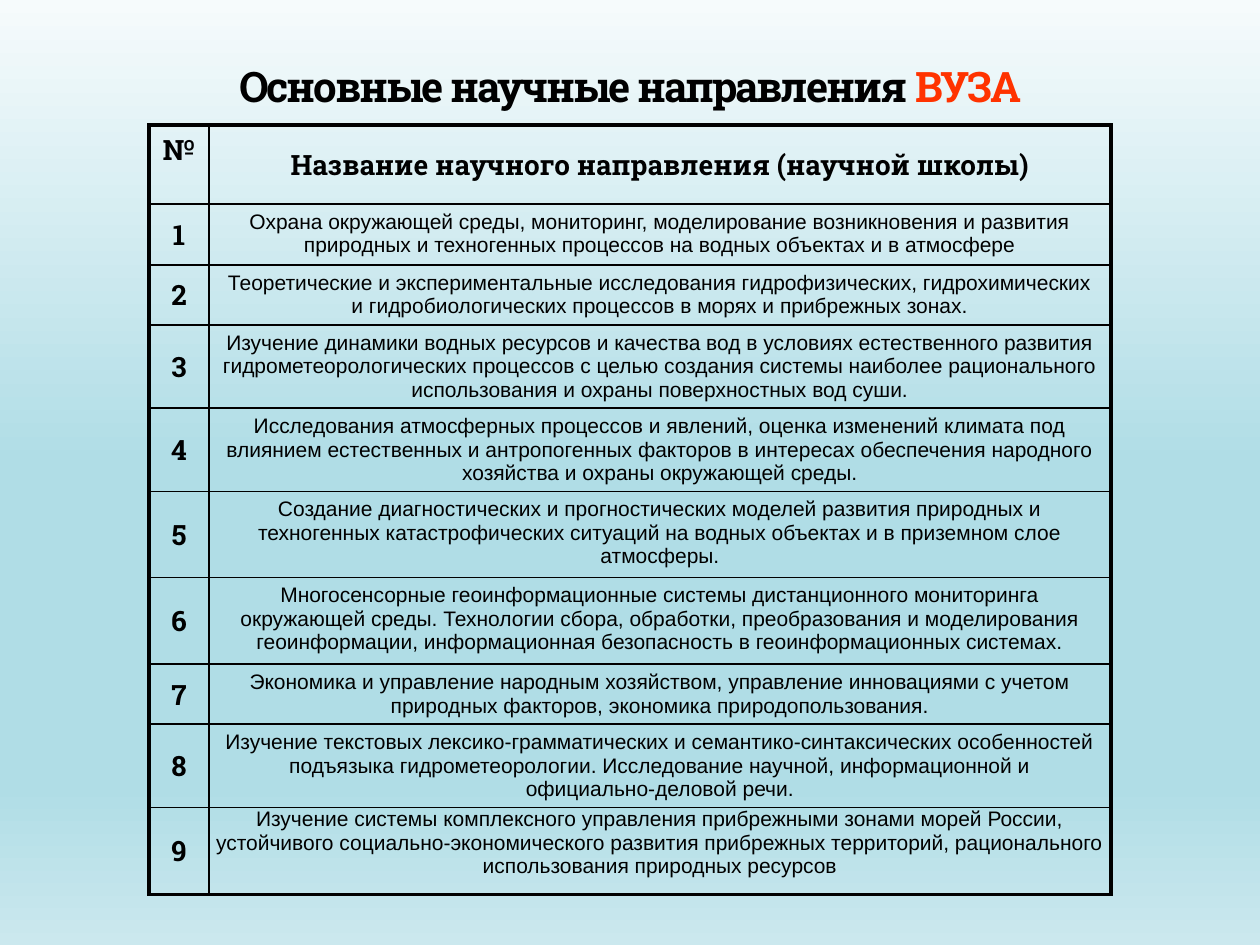
from lxml import etree
from pptx import Presentation
from pptx.dml.color import RGBColor
from pptx.enum.text import MSO_ANCHOR, PP_ALIGN
from pptx.oxml.ns import qn
from pptx.util import Emu, Pt

MIDDLE, TOP = MSO_ANCHOR.MIDDLE, MSO_ANCHOR.TOP
CENTER = PP_ALIGN.CENTER
PX = 7257  # EMU per pixel, 126 px to the inch
SLAB, SANS = "Roboto Slab", "Arial"
BLACK, RED = "000000", "FF3300"
THIN, THICK = 1, 2.25

# Content
TITLE = [("Основные научные направления ", BLACK), ("ВУЗА", RED)]
HEAD = ("№", "Название научного направления (научной школы)")
TOPICS = [
    "Охрана окружающей среды, мониторинг, моделирование возникновения и развития природных и техногенных процессов на водных объектах и в атмосфере",
    "Теоретические и экспериментальные исследования гидрофизических, гидрохимических и гидробиологических процессов в морях и прибрежных зонах.",
    "Изучение динамики водных ресурсов и качества вод в условиях естественного развития гидрометеорологических процессов с целью создания системы наиболее рационального использования и охраны поверхностных вод суши.",
    "Исследования атмосферных процессов и явлений, оценка изменений климата под влиянием естественных и антропогенных факторов в интересах обеспечения народного хозяйства и охраны окружающей среды.",
    "Создание диагностических и прогностических моделей развития природных и техногенных катастрофических ситуаций на водных объектах и в приземном слое атмосферы.",
    "Многосенсорные геоинформационные системы дистанционного мониторинга окружающей среды. Технологии сбора, обработки, преобразования и моделирования геоинформации, информационная безопасность в геоинформационных системах.",
    "Экономика и управление народным хозяйством, управление инновациями с учетом природных факторов, экономика природопользования.",
    "Изучение текстовых лексико-грамматических и семантико-синтаксических особенностей подъязыка гидрометеорологии. Исследование научной, информационной и официально-деловой речи.",
    "Изучение системы комплексного управления прибрежными зонами морей России, устойчивого социально-экономического развития прибрежных территорий, рационального использования природных ресурсов",
]
ROWS = [HEAD] + [(str(n), topic) for n, topic in enumerate(TOPICS, 1)]
COLS = [60, 902]
HEIGHTS = [79, 61, 60, 83, 83, 86, 87, 60, 83, 87]
STOPS = [(0, "F6FBFC"), (49, "B0DDE6"), (83, "B0DDE6"), (100, "CBE8EE")]


def px(n):
    return Emu(n * PX)


def rgb(code):
    return RGBColor.from_string(code)


def write(frame, text, font=SANS, size=12, bold=False, color=BLACK, gap=None):
    para = frame.paragraphs[0]
    para.alignment = CENTER
    run = para.add_run()
    run.text = text
    run.font.name, run.font.size, run.font.bold = font, Pt(size), bold
    run.font.color.rgb = rgb(color)
    if gap is not None:
        run.font._element.set("spc", str(gap))
    return para


def edge(side, width):
    line = etree.Element(qn("a:ln" + side), w=str(Pt(width)))
    fill = etree.SubElement(line, qn("a:solidFill"))
    etree.SubElement(fill, qn("a:srgbClr"), val=BLACK)
    return line


def frame_cell(cell, widths):
    props = cell._tc.get_or_add_tcPr()
    for spot, (side, width) in enumerate(widths.items()):
        props.insert(spot, edge(side, width))


def paint(slide):
    fill = slide.background.fill
    fill.gradient()
    fill.gradient_angle = 270
    stops = slide._element.find(".//" + qn("a:gsLst"))
    for old in list(stops):
        stops.remove(old)
    for spot, code in STOPS:
        stop = etree.SubElement(stops, qn("a:gs"), pos=str(spot * 1000))
        etree.SubElement(stop, qn("a:srgbClr"), val=code)


def add_title(slide):
    title = slide.shapes.title
    title.left, title.top, title.width, title.height = map(px, (63, 49, 1134, 79))
    frame = title.text_frame
    frame.vertical_anchor = MIDDLE
    for text, color in TITLE:
        para = write(frame, text, font=SLAB, size=24, bold=True, color=color, gap=-120)
    para.line_spacing = 0.9


def add_grid(slide):
    last = len(ROWS) - 1
    table = slide.shapes.add_table(
        len(ROWS), len(COLS), px(149), px(125), px(sum(COLS)), px(sum(HEIGHTS))
    ).table
    table.first_row = table.horz_banding = False
    for col, width in zip(table.columns, COLS):
        col.width = px(width)
    for r, row in enumerate(ROWS):
        table.rows[r].height = px(HEIGHTS[r])
        for c, text in enumerate(row):
            cell = table.cell(r, c)
            cell.fill.background()
            # Numbers and the heading are bold slab, topics plain
            strong = c == 0 or r == 0
            style = dict(font=SLAB, size=16, bold=True) if strong else {}
            write(cell.text_frame, text, **style)
            cell.vertical_anchor = MIDDLE if strong and (r, c) != (0, 0) else TOP
            if r == last:
                cell.margin_left = cell.margin_right = 0
                cell.margin_top = cell.margin_bottom = 0
            # Thick outer edge, thin inner lines
            frame_cell(cell, {
                "L": THICK if c == 0 else THIN,
                "R": THICK if c == 1 else THIN,
                "T": THICK if r == 0 else THIN,
                "B": THICK if r == last else THIN,
            })


def main():
    deck = Presentation()
    deck.slide_width, deck.slide_height = px(1260), px(945)
    slide = deck.slides.add_slide(deck.slide_layouts[5])
    paint(slide)
    add_title(slide)
    add_grid(slide)
    deck.save("out.pptx")


if __name__ == "__main__":
    main()
